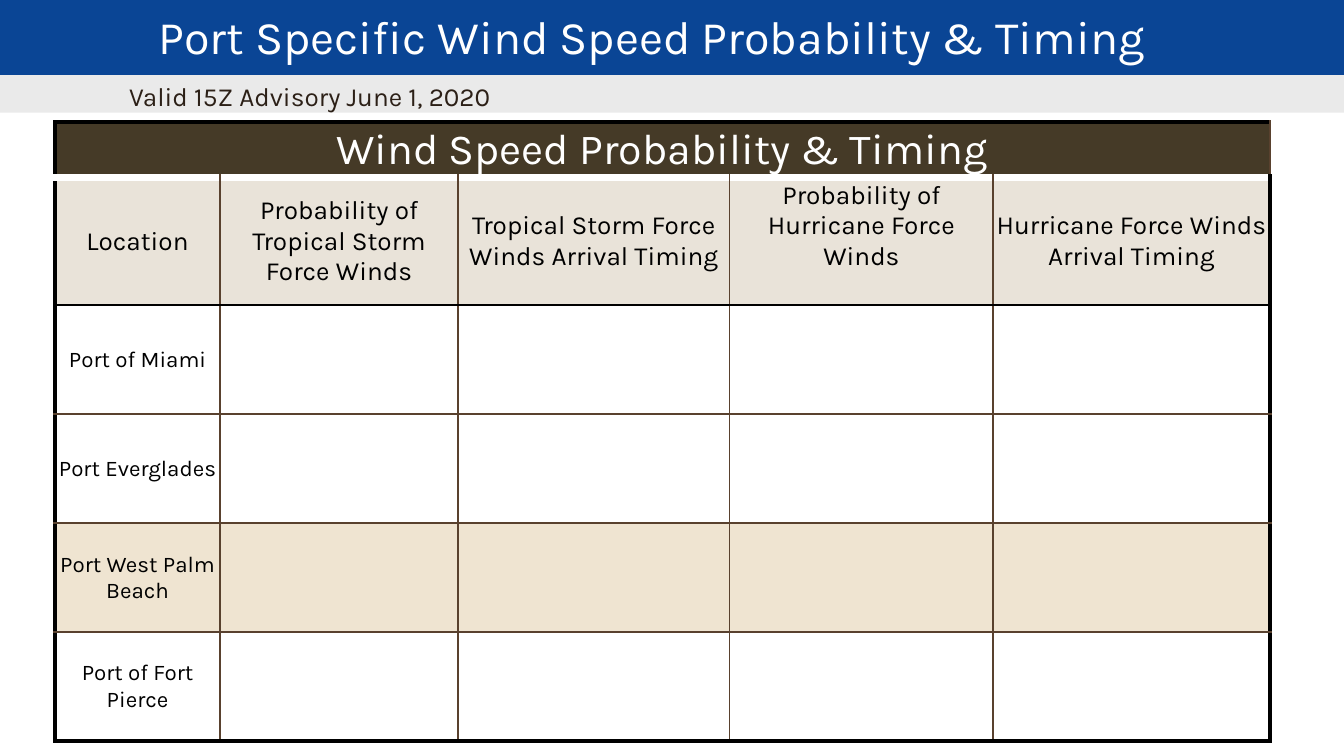
from lxml import etree
from pptx import Presentation
from pptx import util as u
from pptx.dml.color import RGBColor
from pptx.enum import shapes, text
from pptx.oxml import parse_xml
from pptx.oxml.ns import nsdecls, qn

FONT = "Karla"
BROWN, BLACK, WHITE = "59412E", "000000", "FFFFFF"
THIN, FRAME, GAP = 1, 2.25, 4.5

TABLE_TITLE = "Wind Speed Probability & Timing"
HEADERS = [
    "Location",
    "Probability of Tropical Storm Force Winds",
    "Tropical Storm Force Winds Arrival Timing",
    "Probability of Hurricane Force Winds",
    "Hurricane Force Winds Arrival Timing",
]
PORTS = ["Port of Miami", "Port Everglades", "Port West Palm Beach", "Port of Fort Pierce"]
COLUMN_WIDTHS = [3.12, 4.5, 5.13, 4.98, 5.23]
ROW_HEIGHTS = [1.02, 2.4] + [2.06] * len(PORTS)
ROW_FILLS = ["453A27", "E9E3D9", WHITE, WHITE, "EFE4D1", WHITE]


def colour(hex_code):
    return RGBColor.from_string(hex_code)


def write(frame, words, size, color=BLACK, align=text.PP_ALIGN.LEFT):
    paragraph = frame.paragraphs[0]
    paragraph.alignment = align
    run = paragraph.add_run()
    run.text = words
    run.font.name = FONT
    run.font.size = u.Pt(size)
    run.font.color.rgb = colour(color)
    return run


def set_frame(frame, left, top=0, right=0, bottom=0):
    frame.word_wrap = True
    frame.auto_size = text.MSO_AUTO_SIZE.NONE
    frame.vertical_anchor = text.MSO_ANCHOR.TOP
    frame.margin_left, frame.margin_top = u.Cm(left), u.Cm(top)
    frame.margin_right, frame.margin_bottom = u.Cm(right), u.Cm(bottom)


def add_band(slide, top, height, fill):
    band = slide.shapes.add_shape(
        shapes.MSO_SHAPE.RECTANGLE, 0, u.Cm(top), u.Cm(25.4), u.Cm(height))
    band.shadow.inherit = False
    band.fill.solid()
    band.fill.fore_color.rgb = colour(fill)
    band.line.fill.background()


def add_text_shadow(run):
    run.font._element.find(qn("a:solidFill")).addnext(parse_xml(
        f'<a:effectLst {nsdecls("a")}>'
        '<a:outerShdw blurRad="38100" dist="38100" dir="2700000" algn="tl">'
        '<a:srgbClr val="000000"><a:alpha val="43000"/></a:srgbClr>'
        '</a:outerShdw></a:effectLst>'))


def add_title(slide):
    title = slide.shapes.title
    title.left, title.top = u.Cm(2.62), u.Cm(0.15)
    title.width, title.height = u.Cm(22.63), u.Cm(1.07)
    set_frame(title.text_frame, left=0.38)
    add_text_shadow(write(title.text_frame, "Port Specific Wind Speed Probability & Timing",
                          size=25, color=WHITE))
    # The title must lie in front of the bands
    slide.shapes.element.append(title.element)


def add_validity(slide):
    box = slide.shapes.add_textbox(u.Cm(2.06), u.Cm(1.47), u.Cm(12.01), u.Cm(0.69))
    set_frame(box.text_frame, left=0.38, top=0.05, right=0.1, bottom=0.05)
    write(box.text_frame, "Valid 15Z Advisory June 1, 2020", size=14, color="2C2017")


def cell_borders(row, column):
    """Return the (colour, points) pairs of one cell, by side."""
    frame, inner = (BLACK, FRAME), (BROWN, THIN)
    gap, header_rule = (WHITE, GAP), (BLACK, THIN)
    rules = [frame, gap, header_rule] + [inner] * (len(PORTS) - 1) + [frame]
    return {
        "L": frame if column == 0 else inner,
        "R": frame if column == len(HEADERS) - 1 else inner,
        "T": rules[row],
        "B": rules[row + 1],
    }


def style_cell(cell, fill, borders):
    properties = cell._tc.get_or_add_tcPr()
    for side, (color, points) in borders.items():
        line = etree.SubElement(properties, qn(f"a:ln{side}"), w=str(u.Pt(points)))
        solid = etree.SubElement(line, qn("a:solidFill"))
        etree.SubElement(solid, qn("a:srgbClr"), val=color)
    cell.fill.solid()
    cell.fill.fore_color.rgb = colour(fill)
    cell.vertical_anchor = text.MSO_ANCHOR.MIDDLE
    cell.margin_left = cell.margin_right = u.Cm(0.05)
    cell.margin_top = cell.margin_bottom = u.Cm(0.05)


def add_wind_table(slide):
    table = slide.shapes.add_table(
        len(ROW_HEIGHTS), len(COLUMN_WIDTHS), u.Cm(1.04), u.Cm(2.31),
        u.Cm(sum(COLUMN_WIDTHS)), u.Cm(sum(ROW_HEIGHTS))).table
    table.first_row = table.horz_banding = False
    for column, width in zip(table.columns, COLUMN_WIDTHS):
        column.width = u.Cm(width)
    for row, height in zip(table.rows, ROW_HEIGHTS):
        row.height = u.Cm(height)
    for row, fill in enumerate(ROW_FILLS):
        for column in range(len(HEADERS)):
            style_cell(table.cell(row, column), fill, cell_borders(row, column))

    table.cell(0, 0).merge(table.cell(0, len(HEADERS) - 1))
    center = text.PP_ALIGN.CENTER
    write(table.cell(0, 0).text_frame, TABLE_TITLE, size=23, color=WHITE, align=center)
    for column, header in enumerate(HEADERS):
        write(table.cell(1, column).text_frame, header, size=14, align=center)
    for row, port in enumerate(PORTS, start=2):
        write(table.cell(row, 0).text_frame, port, size=12, align=center)
    # The hurricane probability header sits half a line higher than the others
    table.cell(1, 3).margin_bottom = u.Cm(0.63)


def main():
    deck = Presentation()
    deck.slide_width, deck.slide_height = u.Cm(25.4), u.Cm(14.29)
    slide = deck.slides.add_slide(deck.slide_layouts[5])
    add_band(slide, top=0, height=1.6, fill="0A4595")
    add_band(slide, top=1.42, height=0.71, fill="EAEAEA")
    add_wind_table(slide)
    add_title(slide)
    add_validity(slide)
    deck.save("out.pptx")


if __name__ == "__main__":
    main()
